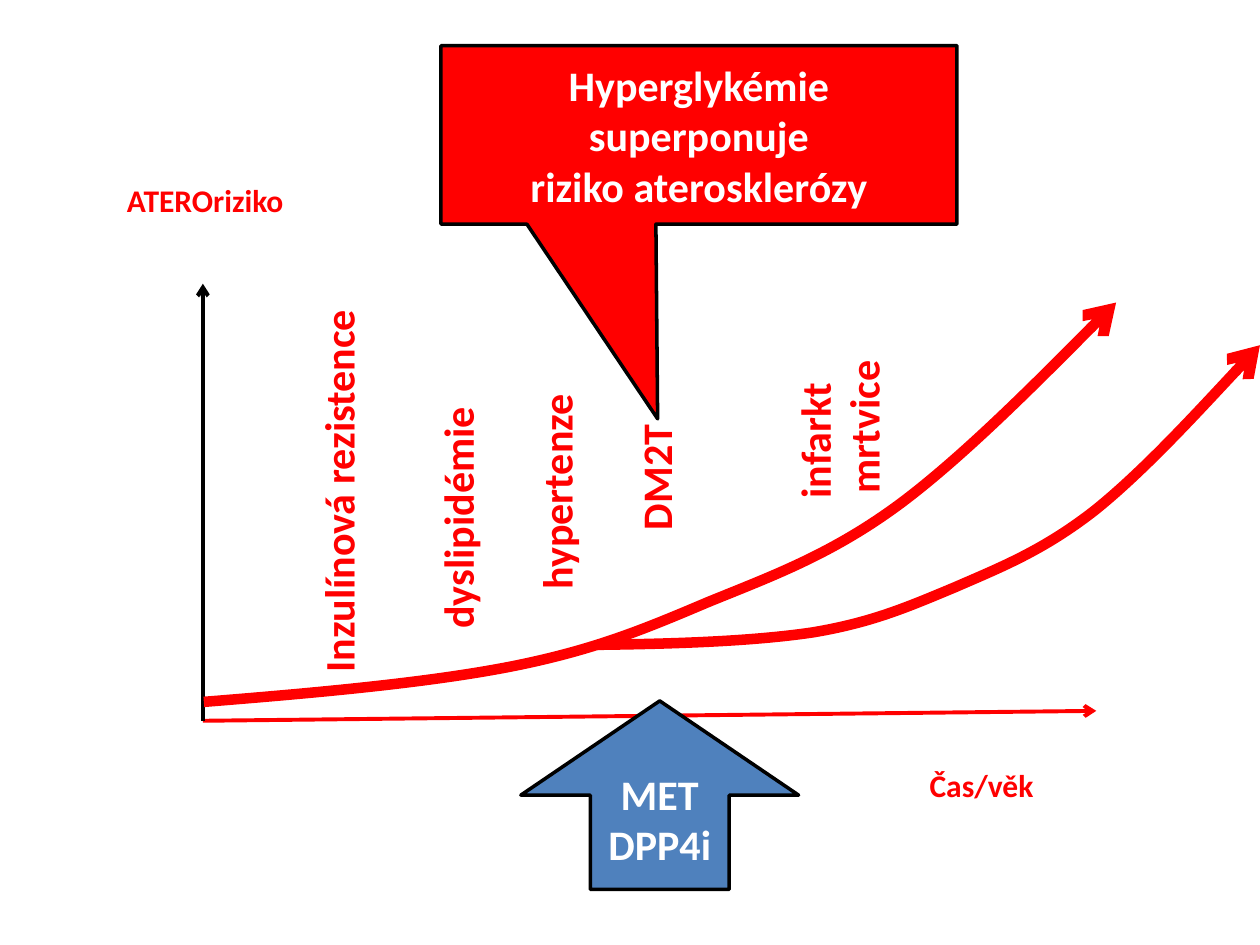
from dataclasses import dataclass

from pptx import Presentation
from pptx.dml.color import RGBColor
from pptx.enum.shapes import MSO_CONNECTOR, MSO_SHAPE
from pptx.enum.text import MSO_ANCHOR, MSO_AUTO_SIZE, PP_ALIGN
from pptx.oxml.ns import qn
from pptx.util import Cm, Pt
from lxml import etree

STRAIGHT = MSO_CONNECTOR.STRAIGHT
CALLOUT = MSO_SHAPE.RECTANGULAR_CALLOUT
UP_ARROW = MSO_SHAPE.UP_ARROW
CENTER, MIDDLE = PP_ALIGN.CENTER, MSO_ANCHOR.MIDDLE
NO_AUTOFIT = MSO_AUTO_SIZE.NONE


@dataclass(frozen=True)
class Theme:
    font: str = "Calibri"
    red: RGBColor = RGBColor(0xFF, 0x00, 0x00)
    blue: RGBColor = RGBColor(0x4F, 0x81, 0xBD)
    black: RGBColor = RGBColor(0x00, 0x00, 0x00)
    white: RGBColor = RGBColor(0xFF, 0xFF, 0xFF)
    large: int = 24
    small: int = 18
    outline: float = 2
    axis: float = 2.25
    curve: float = 6


THEME = Theme()

# All lengths are in centimetres.
SLIDE_SIZE = (25.4, 19.05)
LABEL_HEIGHT = 1.28

# Upright labels: text, centre x, centre y, length
RISK_FACTORS = [
    ("Inzulínová rezistence", 6.82, 9.86, 7.9),
    ("dyslipidémie", 9.22, 10.41, 5.03),
    ("hypertenze", 11.21, 9.88, 4.5),
    ("DM2T", 13.22, 9.6, 2.67),
    ("infarkt", 16.42, 8.86, 2.87),
    ("mrtvice", 17.4, 8.59, 3.2),
]

# Axis titles: text, (left, top, width, height)
AXIS_TITLES = [
    ("Čas/věk", (18.49, 15.32, 2.62, 1.02)),
    ("ATEROriziko", (2.31, 3.53, 3.68, 1.8)),
]

ORIGIN = (4.09, 14.53)
AXES = [((22.1, 14.33), THEME.red), ((4.09, 5.72), THEME.black)]

# Risk curves: start point, then two control points and an end for each bend
CURVES = [
    [
        (4.11, 14.15),
        (6.35, 13.97), (8.59, 13.77), (10.29, 13.44),
        (11.96, 13.11), (12.95, 12.7), (14.27, 12.14),
        (15.57, 11.61), (16.76, 11.18), (18.14, 10.16),
        (19.51, 9.14), (22.5, 6.1), (22.5, 6.1),
    ],
    [
        (12.04, 13.0),
        (13.61, 12.98), (15.16, 12.93), (16.38, 12.75),
        (17.58, 12.55), (18.29, 12.24), (19.25, 11.84),
        (20.19, 11.43), (21.03, 11.1), (22.07, 10.29),
        (23.09, 9.47), (25.4, 6.96), (25.4, 6.96),
    ],
]

# Callouts: preset, (left, top, width, height), adjustments, fill, lines of text
CALLOUTS = [
    (CALLOUT, (8.89, 0.92, 10.4, 3.6), (-0.08, 1.59), THEME.red,
     ["Hyperglykémie", "superponuje", "riziko aterosklerózy"]),
    (UP_ARROW, (10.5, 14.13, 5.6, 3.8), (), THEME.blue, ["MET", "DPP4i"]),
]


def cm(values):
    return [Cm(value) for value in values]


def write(frame, lines, size, color, align=None):
    frame.text = "\n".join(lines)
    for para in frame.paragraphs:
        para.alignment = align
        for span in para.runs:
            font = span.font
            font.name, font.size, font.bold = THEME.font, Pt(size), True
            font.color.rgb = color


def add_label(slide, text, place, size, rotation=0):
    box = slide.shapes.add_textbox(*cm(place))
    box.rotation = rotation
    box.text_frame.word_wrap = False
    box.text_frame.auto_size = NO_AUTOFIT
    write(box.text_frame, [text], size, THEME.red)


def set_line(shape, color, width):
    shape.line.color.rgb = color
    shape.line.width = Pt(width)


def add_arrowhead(shape):
    outline = shape.line._get_or_add_ln()
    etree.SubElement(outline, qn("a:tailEnd"), type="arrow")


def add_axis(slide, end, color):
    axis = slide.shapes.add_connector(STRAIGHT, *cm(ORIGIN + end))
    set_line(axis, color, THEME.axis)
    add_arrowhead(axis)
    etree.SubElement(axis._element.spPr, qn("a:effectLst"))


def bend_segments(shape):
    """Turn each three straight segments of a freeform into one cubic curve."""
    segments = list(shape._element.iter(qn("a:lnTo")))
    for first in range(0, len(segments), 3):
        bend = etree.Element(qn("a:cubicBezTo"))
        segments[first].addprevious(bend)
        for segment in segments[first:first + 3]:
            bend.append(segment[0])
            segment.getparent().remove(segment)


def add_curve(slide, points):
    start, *rest = [cm(point) for point in points]
    builder = slide.shapes.build_freeform(*start)
    builder.add_line_segments(rest, close=False)
    curve = builder.convert_to_shape()
    bend_segments(curve)
    curve.shadow.inherit = False
    curve.fill.background()
    set_line(curve, THEME.red, THEME.curve)
    add_arrowhead(curve)


def add_callout(slide, preset, place, adjustments, fill, lines):
    callout = slide.shapes.add_shape(preset, *cm(place))
    for index, value in enumerate(adjustments):
        callout.adjustments[index] = value
    callout.shadow.inherit = False
    callout.fill.solid()
    callout.fill.fore_color.rgb = fill
    set_line(callout, THEME.black, THEME.outline)
    callout.text_frame.vertical_anchor = MIDDLE
    write(callout.text_frame, lines, THEME.large, THEME.white, CENTER)


def main():
    deck = Presentation()
    deck.slide_width, deck.slide_height = cm(SLIDE_SIZE)
    slide = deck.slides.add_slide(deck.slide_layouts.get_by_name("Blank"))

    for text, x, y, length in RISK_FACTORS:
        place = (x - length / 2, y - LABEL_HEIGHT / 2, length, LABEL_HEIGHT)
        add_label(slide, text, place, THEME.large, rotation=270)
    for end, color in AXES:
        add_axis(slide, end, color)
    for text, place in AXIS_TITLES:
        add_label(slide, text, place, THEME.small)
    for points in CURVES:
        add_curve(slide, points)
    for callout in CALLOUTS:
        add_callout(slide, *callout)

    deck.save("out.pptx")


if __name__ == "__main__":
    main()
